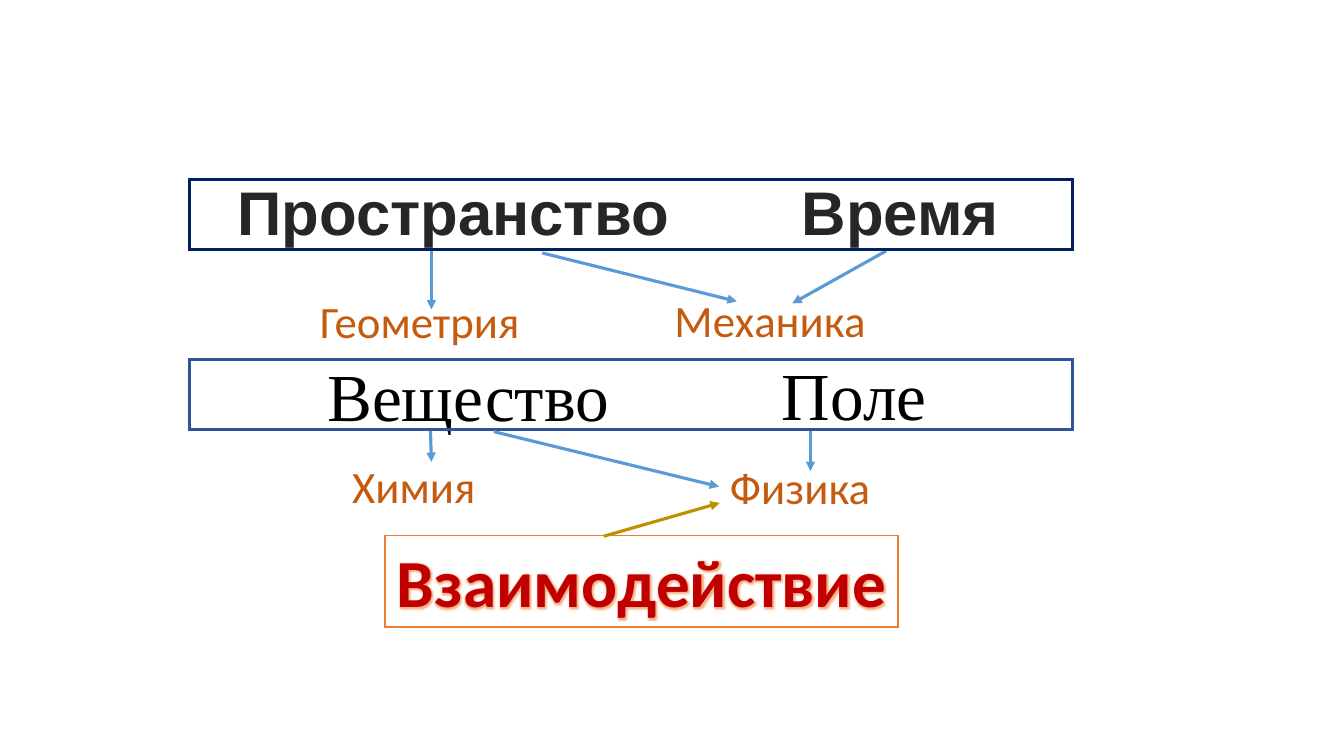
from collections import namedtuple
from dataclasses import dataclass

from lxml import etree
from pptx import Presentation
from pptx import util as u
from pptx.dml.color import RGBColor
from pptx.enum import shapes, text
from pptx.oxml import ns

Box = namedtuple("Box", "left top width height")  # grid columns and rows
Style = namedtuple("Style", "font size color bold")


@dataclass(frozen=True)
class Theme:
    arrow: str = "5B9BD5"
    gold: str = "BF9000"
    glow: str = "ED7D31"
    white: str = "FFFFFF"
    form: Style = Style("Arial", 44, "262626", True)
    matter: Style = Style("Times New Roman", 48, "000000", False)
    science: Style = Style("Calibri", 32, "C55A11", False)
    interaction: Style = Style("Calibri", 48, "C00000", True)
    thin: float = 1
    thick: float = 2.25


THEME = Theme()
WIDTH, HEIGHT = u.Inches(13.33), u.Inches(7.5)
COLUMN, ROW = WIDTH / 40, HEIGHT / 30


def place(region, left, top):
    return int((region.left + left) * COLUMN), int((region.top + top) * ROW)


def extent(width, height):
    return int(width * COLUMN), int(height * ROW)


def set_line(line, color, width):
    line.color.rgb = RGBColor.from_string(color)
    line.width = u.Pt(width)
    etree.SubElement(line._get_or_add_ln(), ns.qn("a:miter"), lim="800000")


def write(shape, words, style):
    frame = shape.text_frame
    frame.word_wrap = False
    frame.auto_size = text.MSO_AUTO_SIZE.SHAPE_TO_FIT_TEXT
    paragraph = frame.paragraphs[0]
    paragraph.alignment = text.PP_ALIGN.CENTER
    run = paragraph.add_run()
    run.text = words
    run.font.name, run.font.bold = style.font, style.bold
    run.font.size = u.Pt(style.size)
    run.font.color.rgb = RGBColor.from_string(style.color)
    return run


def add_frame(slide, region, height, color, width):
    shape = slide.shapes.add_shape(
        shapes.MSO_SHAPE.RECTANGLE, *place(region, 0, 0), *extent(region.width, height))
    shape.shadow.inherit = False
    shape.fill.background()
    set_line(shape.line, color, width)
    return shape


def add_label(slide, region, words, box, style):
    label = slide.shapes.add_textbox(
        *place(region, box.left, box.top), *extent(box.width, box.height))
    write(label, words, style)
    return label


def add_arrow(slide, region, start, end, color=THEME.arrow):
    arrow = slide.shapes.add_connector(
        shapes.MSO_CONNECTOR.STRAIGHT, *place(region, *start), *place(region, *end))
    set_line(arrow.line, color, THEME.thick)
    line = arrow.line._get_or_add_ln()
    etree.SubElement(line, ns.qn("a:tailEnd"), type="triangle")
    etree.SubElement(arrow._element.spPr, ns.qn("a:effectLst"))
    return arrow


def add_glow(run, color):
    effects = etree.Element(ns.qn("a:effectLst"))
    glow = etree.SubElement(effects, ns.qn("a:glow"), rad=str(u.Pt(4)))
    tint = etree.SubElement(glow, ns.qn("a:srgbClr"), val=color)
    etree.SubElement(tint, ns.qn("a:alpha"), val="60000")
    run._r.rPr.find(ns.qn("a:solidFill")).addnext(effects)


def build_tier(slide, region, color, style, concepts, sciences, arrows):
    """A framed pair of concepts with arrows to the sciences below."""
    for words, box in concepts:
        add_label(slide, region, words, box, style)
    labels = [add_label(slide, region, words, box, THEME.science)
              for words, box in sciences]
    for start, end in arrows:
        add_arrow(slide, region, start, end)
    add_frame(slide, region, 2.8, color, THEME.thick)
    return labels


def build_interaction(slide, region):
    """The highlighted box with its arrow to physics."""
    frame = add_frame(slide, region, region.height, THEME.glow, THEME.thin)
    frame.fill.solid()
    frame.fill.fore_color.rgb = RGBColor.from_string(THEME.white)
    add_glow(write(frame, "Взаимодействие", THEME.interaction), THEME.glow)
    add_arrow(slide, region, (6.51, 0.04), (9.96, -1.28), THEME.gold)


def main():
    presentation = Presentation()
    presentation.slide_width, presentation.slide_height = WIDTH, HEIGHT
    slide = presentation.slides.add_slide(presentation.slide_layouts[6])

    # Space and time
    build_tier(
        slide, Box(5.64, 7.12, 26.28, 7), "002060", THEME.form,
        [("Пространство", Box(1.08, -0.4, 13.56, 3.36)),
         ("Время", Box(17.7, -0.4, 6.9, 3.36))],
        [("Геометрия", Box(3.55, 4.34, 6.6, 2.56)),
         ("Механика", Box(14.1, 4.28, 6.36, 2.56))],
        [((7.2, 2.84), (7.2, 5.16)),
         ((10.5, 2.92), (16.29, 4.84)),
         ((20.73, 2.84), (17.94, 4.92))])

    # Matter and field
    matter = Box(5.64, 14.25, 26.28, 7)
    chemistry, physics = build_tier(
        slide, matter, "2F5597", THEME.matter,
        [("Вещество", Box(3.77, -0.4, 9.06, 3.64)),
         ("Поле", Box(17.31, -0.44, 4.95, 3.64))],
        [("Химия", Box(4.53, 3.76, 4.29, 2.56)),
         ("Физика", Box(15.76, 3.78, 4.83, 2.56))],
        [((7.17, 2.76), (7.2, 4.08)),
         ((18.48, 2.8), (18.48, 4.44))])
    add_arrow(slide, matter, (9.06, 2.88), (15.76, 5.06)).end_connect(physics, 1)

    # Interaction
    build_interaction(slide, Box(11.46, 21.24, 15.27, 3.64))
    presentation.save("out.pptx")


if __name__ == "__main__":
    main()
